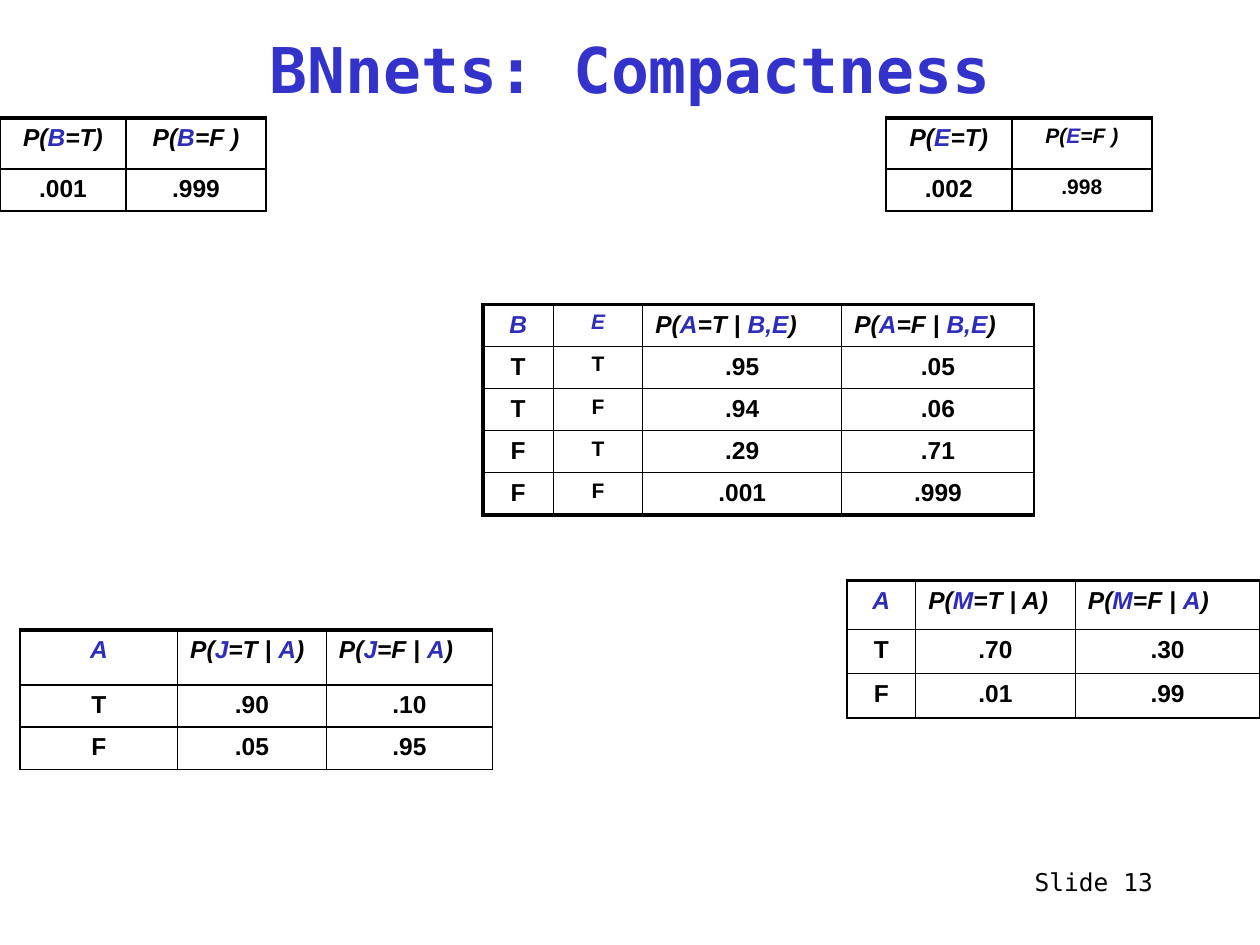
from lxml import etree
from pptx import Presentation
from pptx.dml.color import RGBColor
from pptx.enum import text
from pptx.oxml import ns
from pptx.util import Pt

BLACK, WHITE, BLUE, TITLE_BLUE = "000000", "FFFFFF", "2D2DB9", "3333CC"
THIN, THICK = 1, 2.25
LEFT, CENTER, RIGHT = text.PP_ALIGN.LEFT, text.PP_ALIGN.CENTER, text.PP_ALIGN.RIGHT


def color(value):
    return RGBColor.from_string(value)


def write(frame, content, font="Arial", size=14, fill=BLACK, accent=BLUE,
          bold=False, italic=False, align=LEFT):
    """Write one paragraph; parts between asterisks take the accent colour."""
    paragraph = frame.paragraphs[0]
    paragraph.alignment = align
    for index, part in enumerate(content.split("*")):
        if part:
            run = paragraph.add_run()
            run.text = part
            run.font.name = font
            run.font.size = Pt(size)
            run.font.bold = bold
            run.font.italic = italic
            run.font.color.rgb = color(accent if index % 2 else fill)


def draw_border(cell, side, width):
    properties = cell._tc.get_or_add_tcPr()
    line = etree.SubElement(properties, ns.qn(f"a:ln{side}"), w=str(Pt(width)))
    fill = etree.SubElement(line, ns.qn("a:solidFill"))
    etree.SubElement(fill, ns.qn("a:srgbClr"), val=BLACK)


class SlideBuilder:
    """Holds the style and the current slide."""

    mono = "DejaVu Sans Mono"

    def __init__(self, presentation):
        self.slide = presentation.slides.add_slide(presentation.slide_layouts[6])

    def text_box(self, left, top, width, height, content,
                 anchor=text.MSO_ANCHOR.TOP, **style):
        shape = self.slide.shapes.add_textbox(Pt(left), Pt(top), Pt(width), Pt(height))
        shape.text_frame.word_wrap = True
        shape.text_frame.vertical_anchor = anchor
        write(shape.text_frame, content, font=self.mono, **style)

    def probability_table(self, left, top, widths, heights, rows,
                          small_column=None, heavy_frame=False):
        """Add a table with a heavy top; heavy_frame adds the left and bottom."""
        shape = self.slide.shapes.add_table(
            len(rows), len(widths), Pt(left), Pt(top), Pt(sum(widths)), Pt(sum(heights)))
        table = shape.table
        table.first_row = table.horz_banding = False
        for column, width in zip(table.columns, widths):
            column.width = Pt(width)
        for row, height in zip(table.rows, heights):
            row.height = Pt(height)
        for r, values in enumerate(rows):
            for c, value in enumerate(values):
                cell = table.cell(r, c)
                write(cell.text_frame, value, size=12 if c == small_column else 14,
                      bold=True, italic=r == 0, align=LEFT if "|" in value else CENTER)
                heavy = {"L": heavy_frame and c == 0, "R": False, "T": r == 0,
                         "B": heavy_frame and r == len(rows) - 1}
                for side, is_heavy in heavy.items():
                    draw_border(cell, side, THICK if is_heavy else THIN)
                cell.fill.solid()
                cell.fill.fore_color.rgb = color(WHITE)


def main():
    presentation = Presentation()
    presentation.slide_width, presentation.slide_height = Pt(720), Pt(540)
    builder = SlideBuilder(presentation)

    builder.text_box(516, 492, 150, 36, "Slide 13", align=RIGHT)
    builder.text_box(24, 12, 672, 54, "BNnets: Compactness", size=36, fill=TITLE_BLUE,
                     bold=True, align=CENTER, anchor=text.MSO_ANCHOR.MIDDLE)

    builder.probability_table(
        276, 174, [40.3, 51, 113.7, 110], [24] * 5,
        [["*B*", "*E*", "P(*A*=T | *B,E*)", "P(*A*=F | *B,E*)"],
         ["T", "T", ".95", ".05"],
         ["T", "F", ".94", ".06"],
         ["F", "T", ".29", ".71"],
         ["F", "F", ".001", ".999"]],
        small_column=1, heavy_frame=True)

    for left, cause, values, small_column in [(0, "B", [".001", ".999"], None),
                                              (506.2, "E", [".002", ".998"], 1)]:
        builder.probability_table(
            left, 67.5, [72, 80], [29, 24],
            [[f"P(*{cause}*=T)", f"P(*{cause}*=F )"], values], small_column=small_column)

    builder.probability_table(
        11.5, 360, [90, 85, 95], [31.5, 23.2, 23.2],
        [["*A*", "P(*J*=T | *A*)", "P(*J*=F | *A*)"],
         ["T", ".90", ".10"],
         ["F", ".05", ".95"]])
    builder.probability_table(
        484, 331.7, [39.3, 91.2, 105.5], [28, 25.3, 25.3],
        [["*A*", "P(*M*=T | A)", "P(*M*=F | *A*)"],
         ["T", ".70", ".30"],
         ["F", ".01", ".99"]])

    presentation.save("out.pptx")


if __name__ == "__main__":
    main()
